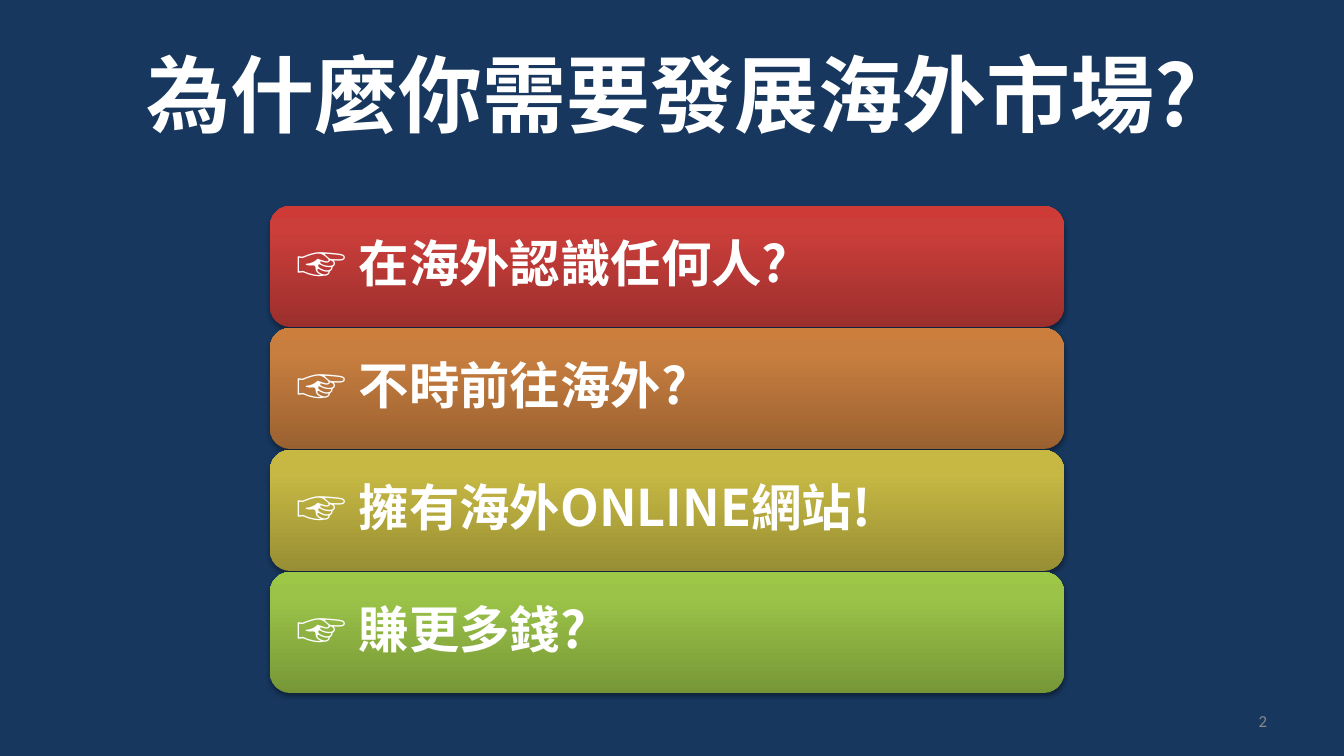
from lxml.etree import SubElement
from pptx import Presentation
from pptx.dml.color import RGBColor
from pptx.enum.shapes import MSO_SHAPE as Shape
from pptx.enum.text import MSO_ANCHOR as Anchor, PP_ALIGN as Align
from pptx.oxml.ns import qn
from pptx.util import Pt

EMU_PER_PX = 914400 / 100.8

NAVY = RGBColor(0x17, 0x37, 0x5E)
WHITE = RGBColor(0xFF, 0xFF, 0xFF)
GREY = RGBColor(0x89, 0x89, 0x89)
BLACK = RGBColor(0x00, 0x00, 0x00)

# Each gradient runs from the bottom of the bar to its top
RED = (RGBColor(0x9C, 0x2F, 0x2D), RGBColor(0xCB, 0x3E, 0x3A), RGBColor(0xCE, 0x3B, 0x37))
ORANGE = (RGBColor(0x9A, 0x61, 0x30), RGBColor(0xC8, 0x7E, 0x3F), RGBColor(0xCC, 0x7E, 0x3C))
YELLOW = (RGBColor(0x98, 0x8E, 0x34), RGBColor(0xC6, 0xB8, 0x43), RGBColor(0xC9, 0xBB, 0x41))
GREEN = (RGBColor(0x77, 0x97, 0x37), RGBColor(0x9B, 0xC3, 0x48), RGBColor(0x9D, 0xC7, 0x46))
STOPS = (0, 80, 100)

HEADING_FONT = "Noto Sans CJK SC"
NUMBER_FONT = "Calibri"

REASONS = [
    ("☞ 在海外認識任何人?", RED),
    ("☞ 不時前往海外?", ORANGE),
    ("☞ 擁有海外ONLINE網站!", YELLOW),
    ("☞ 賺更多錢?", GREEN),
]
BAR_TOP, BAR_PITCH = 206, 122


def px(length):
    return round(length * EMU_PER_PX)


def write(frame, text, *, size, color=WHITE, font=HEADING_FONT, bold=True,
          align=Align.LEFT, spacing=None):
    frame.word_wrap = True
    frame.vertical_anchor = Anchor.MIDDLE
    paragraph = frame.paragraphs[0]
    paragraph.alignment = align
    paragraph.line_spacing = spacing
    run = paragraph.add_run()
    run.text = text
    run.font.size = Pt(size)
    run.font.bold = bold
    run.font.color.rgb = color
    run.font.name = font
    SubElement(run.font._element, qn("a:ea"), typeface=font)


class Deck:
    def __init__(self, width, height):
        self.file = Presentation()
        self.file.slide_width, self.file.slide_height = px(width), px(height)

    def add_slide(self, background):
        self.slide = self.file.slides.add_slide(self.file.slide_layouts[6])
        fill = self.slide.background.fill
        fill.solid()
        fill.fore_color.rgb = background

    def label(self, left, top, width, height, text, **style):
        box = self.slide.shapes.add_textbox(px(left), px(top), px(width), px(height))
        write(box.text_frame, text, **style)

    def bar(self, left, top, width, height, text, colors, inset, **style):
        bar = self.slide.shapes.add_shape(
            Shape.ROUNDED_RECTANGLE, px(left), px(top), px(width), px(height))
        bar.line.fill.background()
        self.shade(bar, colors)
        self.drop_shadow(bar)
        frame = bar.text_frame
        frame.margin_left = frame.margin_right = px(inset)
        frame.margin_top = frame.margin_bottom = px(inset)
        write(frame, text, **style)

    def shade(self, shape, colors):
        shape.fill.gradient()
        shape.fill.gradient_angle = 90
        stops = shape._element.spPr.find(qn("a:gradFill")).find(qn("a:gsLst"))
        for stop in list(stops):
            stops.remove(stop)
        for position, color in zip(STOPS, colors):
            stop = SubElement(stops, qn("a:gs"), pos=str(position * 1000))
            SubElement(stop, qn("a:srgbClr"), val=str(color))

    def drop_shadow(self, shape):
        shape.shadow.inherit = False
        effects = shape._element.spPr.find(qn("a:effectLst"))
        shadow = SubElement(effects, qn("a:outerShdw"), blurRad=str(Pt(3.1)),
                            dist=str(Pt(1.8)), dir="5400000", rotWithShape="0")
        color = SubElement(shadow, qn("a:srgbClr"), val=str(BLACK))
        SubElement(color, qn("a:alpha"), val="35000")


def main():
    deck = Deck(1344, 756)
    deck.add_slide(NAVY)

    # Title
    deck.label(67, 30, 1210, 126, "為什麼你需要發展海外市場?", size=60, align=Align.CENTER)

    # Slide number
    deck.label(964, 701, 313, 40, "2", size=12, color=GREY, font=NUMBER_FONT,
               bold=False, align=Align.RIGHT)

    # Stack of reasons
    for row, (reason, colors) in enumerate(REASONS):
        deck.bar(270, BAR_TOP + row * BAR_PITCH, 794, 121, reason, colors,
                 inset=21, size=36, spacing=0.9)

    deck.file.save("out.pptx")


if __name__ == "__main__":
    main()
